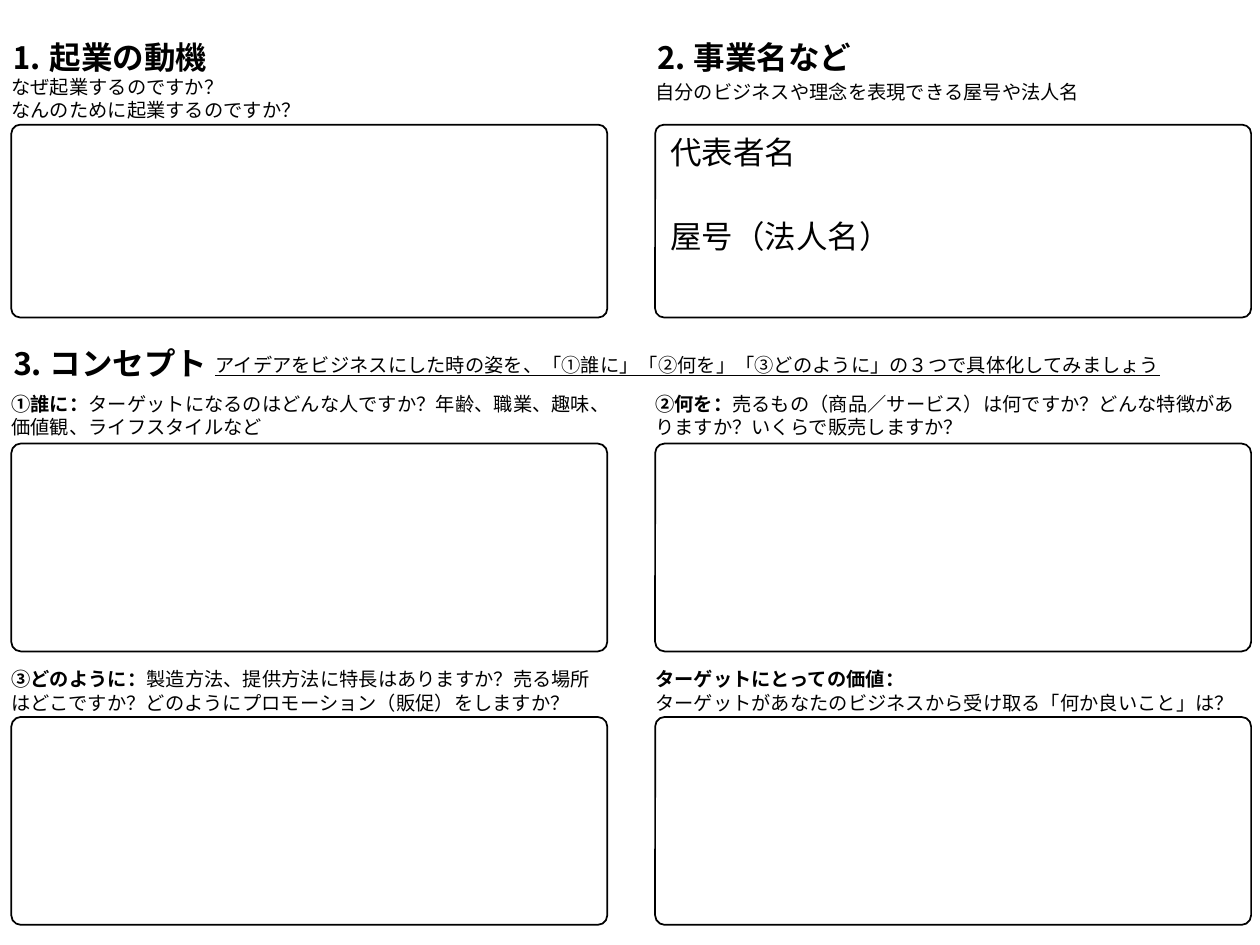
import pptx
import pptx.dml.color
import pptx.enum.shapes
import pptx.enum.text
import pptx.util

EMU_PER_PX = 9144  # 100 px to the inch
INK, PAPER = "000000", "FFFFFF"
LEFT, RIGHT, WIDTH = 9, 520, 473
SMALL, LARGE = 11, 18


def px(length):
    return pptx.util.Emu(length * EMU_PER_PX)


def colour(hex_string):
    return pptx.dml.color.RGBColor.from_string(hex_string)


class Worksheet:
    """Holds the style and the current slide."""

    font_name = "Calibri"

    def __init__(self, deck):
        self.slide = deck.slides.add_slide(deck.slide_layouts[6])

    def style(self, para, size, bold=False, underline=None):
        para.alignment = pptx.enum.text.PP_ALIGN.LEFT
        font = para.font
        font.name, font.size = self.font_name, pptx.util.Pt(size)
        font.bold, font.underline = bold, underline
        font.color.rgb = colour(INK)

    def text(self, left, top, height, lines, size=SMALL, width=WIDTH,
             bold=False, underline=None, middle=False):
        """Each line is a list of (wording, is_label) spans or a plain string."""
        box = self.slide.shapes.add_textbox(px(left), px(top), px(width), px(height))
        frame = box.text_frame
        frame.word_wrap = True
        frame.auto_size = pptx.enum.text.MSO_AUTO_SIZE.SHAPE_TO_FIT_TEXT
        frame.margin_left = frame.margin_right = 0
        frame.margin_top = frame.margin_bottom = 0
        anchor = pptx.enum.text.MSO_ANCHOR
        frame.vertical_anchor = anchor.MIDDLE if middle else anchor.TOP
        for index, line in enumerate(lines):
            para = frame.add_paragraph() if index else frame.paragraphs[0]
            self.style(para, size, bold, underline)
            spans = [(line, False)] if isinstance(line, str) else line
            for wording, is_label in spans:
                span = para.add_run()
                span.text = wording
                if is_label:
                    span.font.bold = True

    def heading(self, left, top, wording):
        self.text(left, top, 30, [wording], LARGE, bold=True, middle=True)

    def answer_box(self, left, top, height, prompts=(), gap=0):
        box = self.slide.shapes.add_shape(
            pptx.enum.shapes.MSO_SHAPE.ROUNDED_RECTANGLE,
            px(left), px(top), px(WIDTH), px(height))
        box.adjustments[0] = 0.046
        box.shadow.inherit = False
        box.fill.solid()
        box.fill.fore_color.rgb = colour(PAPER)
        box.line.color.rgb = colour(INK)
        box.line.width = pptx.util.Pt(1)
        frame = box.text_frame
        frame.vertical_anchor = pptx.enum.text.MSO_ANCHOR.TOP
        for index, prompt in enumerate(prompts):
            para = frame.add_paragraph() if index else frame.paragraphs[0]
            para.text = prompt
            self.style(para, LARGE)
            if index:
                para.space_before = pptx.util.Pt(gap)


def main():
    deck = pptx.Presentation()
    deck.slide_width, deck.slide_height = px(1000), px(750)
    sheet = Worksheet(deck)

    # Sections 1 and 2: motive and business name
    sheet.heading(LEFT, 30, "⒈ 起業の動機")
    sheet.text(LEFT, 60, 37, ["なぜ起業するのですか？", "なんのために起業するのですか？"])
    sheet.answer_box(LEFT, 99, 153)
    sheet.heading(RIGHT, 30, "⒉ 事業名など")
    sheet.text(RIGHT, 64, 19, ["自分のビジネスや理念を表現できる屋号や法人名"])
    sheet.answer_box(RIGHT, 99, 153, ["代表者名", "屋号（法人名）"], gap=26)

    # Section 3: concept heading with its guidance
    sheet.heading(LEFT, 273, "⒊ コンセプト")
    sheet.text(171, 280, 19,
               ["アイデアをビジネスにした時の姿を、「①誰に」「②何を」「③どのように」の３つで具体化してみましょう"],
               width=813, underline=True)

    # Concept questions, each above its answer box
    who = [[("①誰に：", True),
            ("ターゲットになるのはどんな人ですか？年齢、職業、趣味、価値観、ライフスタイルなど", False)]]
    what = [[("②何を：", True),
             ("売るもの（商品／サービス）は何ですか？どんな特徴がありますか？いくらで販売しますか？", False)]]
    how = [[("③どのように：", True),
            ("製造方法、提供方法に特長はありますか？売る場所はどこですか？"
             "どのようにプロモーション（販促）をしますか？", False)]]
    value = [[("ターゲットにとっての価値：", True)],
             "ターゲットがあなたのビジネスから受け取る「何か良いこと」は？"]
    rows = [(311, 352, who, what), (530, 569, how, value)]
    for question_top, box_top, *questions in rows:
        for left, question in zip((LEFT, RIGHT), questions):
            sheet.text(left, question_top, 37, question)
            sheet.answer_box(left, box_top, 165)

    deck.save("out.pptx")


if __name__ == "__main__":
    main()
